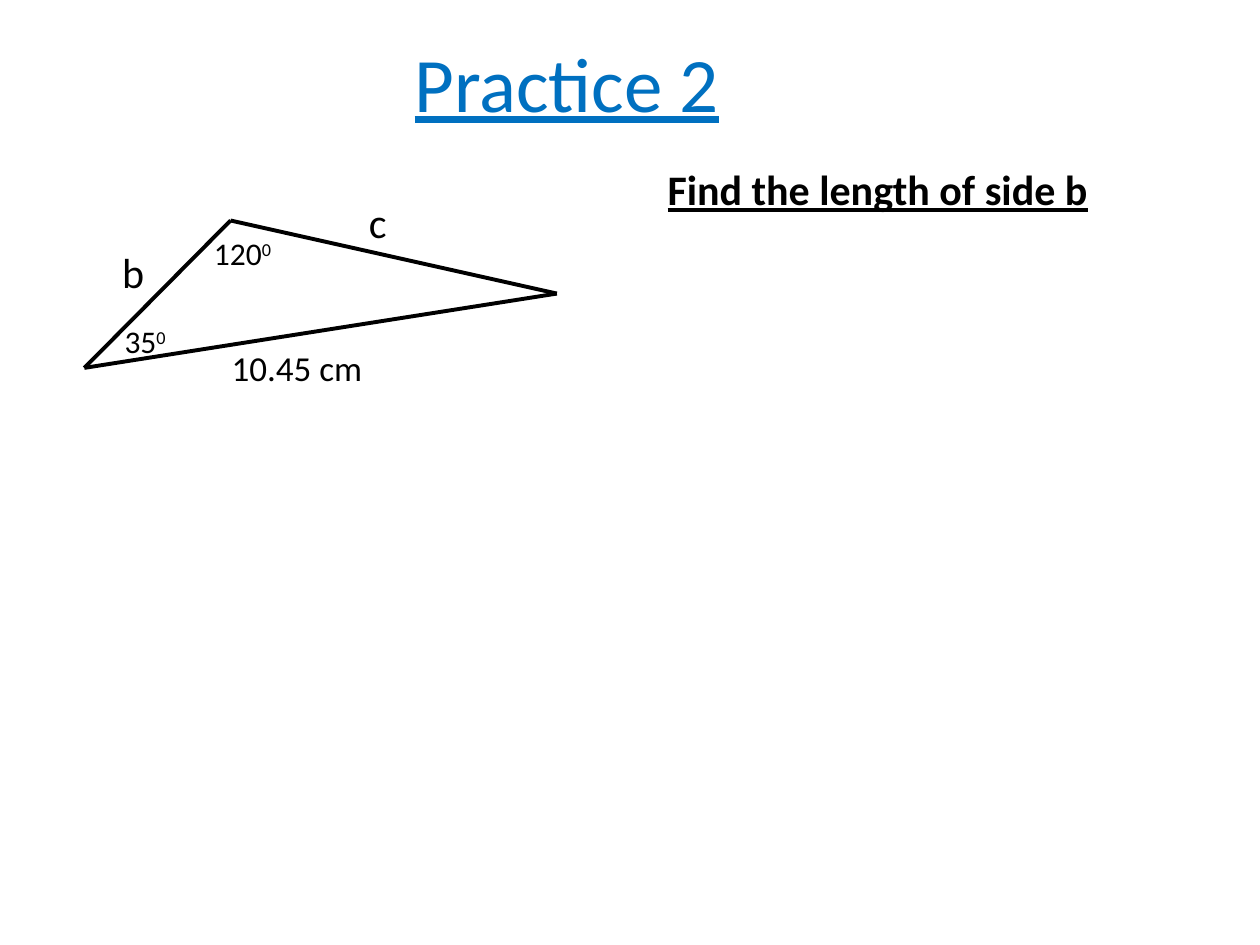
import pptx
import pptx.dml.color
import pptx.enum.shapes
import pptx.enum.text
import pptx.oxml.ns
import pptx.util
from lxml import etree
from pptx.util import Inches

BLUE = pptx.dml.color.RGBColor(0x00, 0x70, 0xC0)
BLACK = pptx.dml.color.RGBColor(0x00, 0x00, 0x00)
FONT = "Calibri"
TITLE_ONLY = 5

# Triangle corners
LEFT_CORNER = (0.67, 2.92)
TOP_CORNER = (1.83, 1.75)
RIGHT_CORNER = (4.42, 2.33)


def add_run(paragraph, text, size, color=BLACK, bold=False, underline=False):
    run = paragraph.add_run()
    run.text = text
    font = run.font
    font.name, font.size, font.color.rgb = FONT, pptx.util.Pt(size), color
    font.bold, font.underline = bold, underline
    return run


def add_title(slide, text):
    title = slide.shapes.title
    title.left, title.top = Inches(0), Inches(0.02)
    title.width, title.height = Inches(9), Inches(1.25)
    title.text_frame.vertical_anchor = pptx.enum.text.MSO_ANCHOR.MIDDLE
    heading = title.text_frame.paragraphs[0]
    heading.alignment = pptx.enum.text.PP_ALIGN.CENTER
    add_run(heading, text, 44, BLUE, underline=True)


def add_side(slide, start, end):
    side = slide.shapes.add_connector(
        pptx.enum.shapes.MSO_CONNECTOR.STRAIGHT,
        *(Inches(value) for value in start + end))
    side.line.color.rgb = BLACK
    side.line.width = pptx.util.Pt(2.25)
    etree.SubElement(side.element.spPr, pptx.oxml.ns.qn("a:effectLst"))


def add_label(slide, box, text, size, **style):
    label = slide.shapes.add_textbox(*(Inches(value) for value in box))
    label.text_frame.word_wrap = False
    label.text_frame.auto_size = pptx.enum.text.MSO_AUTO_SIZE.SHAPE_TO_FIT_TEXT
    paragraph = label.text_frame.paragraphs[0]
    add_run(paragraph, text, size, **style)
    return paragraph


def add_angle(slide, box, degrees):
    paragraph = add_label(slide, box, degrees, 18)
    degree_mark = add_run(paragraph, "0", 18)
    degree_mark.font._element.set("baseline", "30000")


def main():
    deck = pptx.Presentation()
    deck.slide_width, deck.slide_height = Inches(10), Inches(7.5)
    slide = deck.slides.add_slide(deck.slide_layouts[TITLE_ONLY])

    add_title(slide, "Practice 2")

    # Triangle
    add_side(slide, LEFT_CORNER, TOP_CORNER)
    add_side(slide, TOP_CORNER, RIGHT_CORNER)
    add_side(slide, LEFT_CORNER, RIGHT_CORNER)

    # Task
    add_label(slide, (5.2, 1.25, 3.57, 0.5), "Find the length of side b", 24,
              bold=True, underline=True)

    # Side names and length
    add_label(slide, (0.87, 1.91, 0.38, 0.5), "b", 24)
    add_label(slide, (2.83, 1.51, 0.34, 0.5), "c", 24)
    add_label(slide, (1.74, 2.7, 1.25, 0.44), "10.45 cm", 20)

    # Known angles
    add_angle(slide, (1.6, 1.81, 0.67, 0.4), "120")
    add_angle(slide, (0.89, 2.51, 0.54, 0.4), "35")

    deck.save("out.pptx")


if __name__ == "__main__":
    main()
